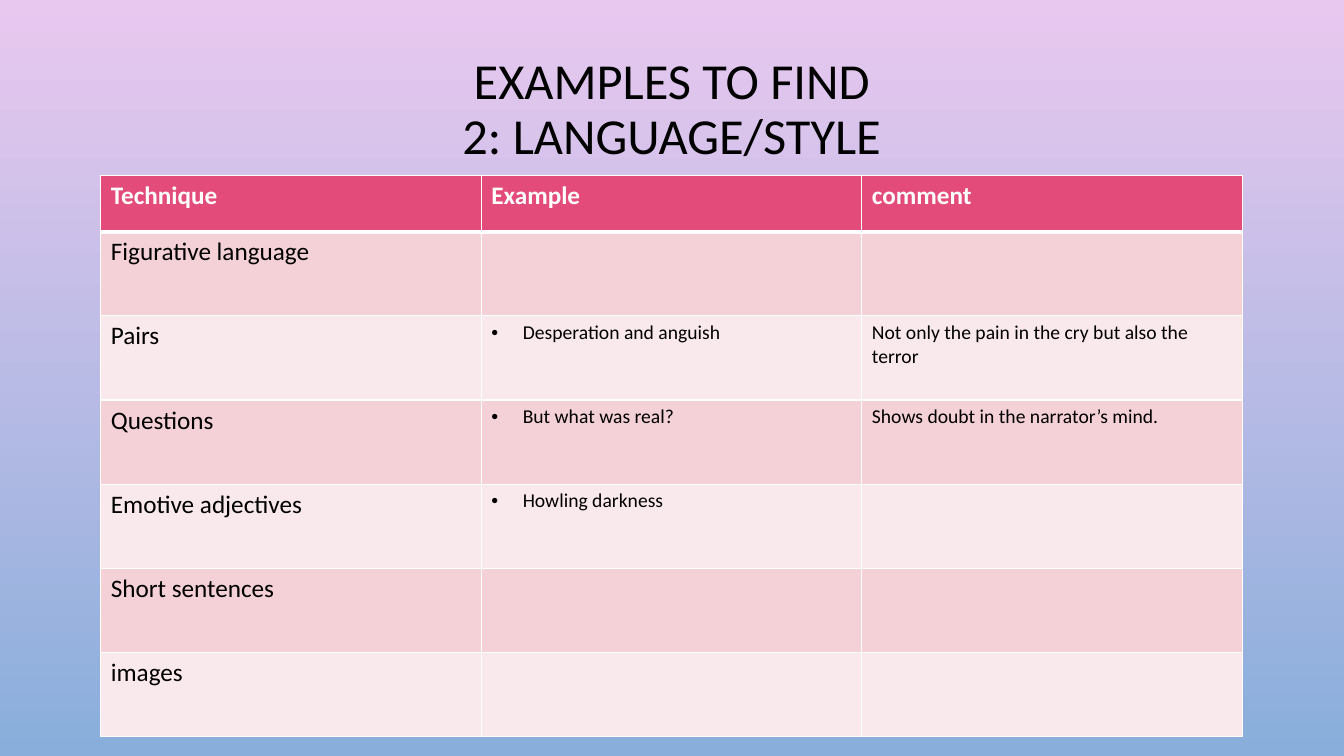
import pptx
import pptx.dml.color
import pptx.enum.text
import pptx.oxml
import pptx.oxml.ns
import pptx.util

Cm = pptx.util.Cm
Pt = pptx.util.Pt

HEADINGS = ("Technique", "Example", "comment")
TECHNIQUES = (
    ("Figurative language", "", ""),
    ("Pairs", "Desperation and anguish", "Not only the pain in the cry but also the terror"),
    ("Questions", "But what was real?", "Shows doubt in the narrator’s mind."),
    ("Emotive adjectives", "Howling darkness", ""),
    ("Short sentences", "", ""),
    ("images", "", ""),
)
TITLE = {"size": Pt(36), "bold": False, "color": "000000"}
HEADING = {"size": Pt(18), "bold": True, "color": "FFFFFF"}
TECHNIQUE = {"size": Pt(18), "bold": False, "color": "000000"}
DETAIL = {"size": Pt(14), "bold": False, "color": "000000"}
HEADING_FILL = "E34B7A"
BAND_FILLS = ("F4D0D7", "FAE9EC")
EDGE = "FFFFFF"


def set_color(target, value):
    """Give a colour format a hex colour."""
    target.rgb = pptx.dml.color.RGBColor.from_string(value)


def format_runs(paragraph, look):
    """Apply a dict of font values to every run of a paragraph."""
    for run in paragraph.runs:
        run.font.name = "Calibri"
        for attribute, value in look.items():
            if attribute == "color":
                set_color(run.font.color, value)
            else:
                setattr(run.font, attribute, value)


def paint_background(slide, top, bottom):
    """Fill the slide with a vertical gradient."""
    fill = slide.background.fill
    fill.gradient()
    fill.gradient_angle = 270
    for stop, position, value in zip(fill.gradient_stops, (0, 1), (top, bottom)):
        stop.position = position
        set_color(stop.color, value)


def add_title(slide, wording):
    """Add the centred slide title."""
    title = slide.shapes.add_textbox(Cm(2.54), Cm(0.56), Cm(28.78), Cm(4.45))
    frame = title.text_frame
    frame.word_wrap = True
    frame.vertical_anchor = pptx.enum.text.MSO_ANCHOR.MIDDLE
    heading = frame.paragraphs[0]
    heading.text = wording
    heading.alignment = pptx.enum.text.PP_ALIGN.CENTER
    heading.line_spacing = 0.9
    format_runs(heading, TITLE)


def add_bullet(paragraph):
    """Give a paragraph a round bullet with a hanging indent."""
    properties = paragraph._p.get_or_add_pPr()
    properties.set("marL", str(Cm(0.79)))
    properties.set("indent", str(-Cm(0.79)))
    namespace = pptx.oxml.ns.nsdecls("a")
    for element in ('buFont {} typeface="Arial"', 'buChar {} char="•"'):
        properties.append(pptx.oxml.parse_xml(f"<a:{element.format(namespace)}/>"))


def add_borders(cell, top, bottom):
    """Draw the four edges of a cell, with the given top and bottom widths."""
    properties = cell._tc.get_or_add_tcPr()
    for side, width in (("L", 1), ("R", 1), ("T", top), ("B", bottom)):
        properties.append(pptx.oxml.parse_xml(
            f'<a:ln{side} {pptx.oxml.ns.nsdecls("a")} w="{Pt(width)}">'
            f'<a:solidFill><a:srgbClr val="{EDGE}"/></a:solidFill></a:ln{side}>'))


def fill_cell(cell, wording, look, fill, edges, bulleted):
    """Write and style one table cell."""
    add_borders(cell, *edges)
    cell.fill.solid()
    set_color(cell.fill.fore_color, fill)
    if not wording:
        return
    paragraph = cell.text_frame.paragraphs[0]
    paragraph.text = wording
    if bulleted:
        add_bullet(paragraph)
    format_runs(paragraph, look)


def add_techniques(slide):
    """Add the table of techniques, examples and comments."""
    rows = (HEADINGS, *TECHNIQUES)
    grid = slide.shapes.add_table(
        len(rows), len(HEADINGS), Cm(2.54), Cm(4.42), Cm(28.78), Cm(14.14)).table
    grid.horz_banding = False
    for column in grid.columns:
        column.width = Cm(9.59)
    for r, wordings in enumerate(rows):
        grid.rows[r].height = Cm(2.12 if r else 1.42)
        fill = BAND_FILLS[(r - 1) % 2] if r else HEADING_FILL
        edges = (3 if r == 1 else 1, 1 if r else 3)
        for c, wording in enumerate(wordings):
            look = (DETAIL if c else TECHNIQUE) if r else HEADING
            fill_cell(grid.cell(r, c), wording, look, fill, edges, r > 0 and c == 1)


def main():
    """Build and save the slide."""
    deck = pptx.Presentation()
    deck.slide_width = Cm(33.87)
    deck.slide_height = Cm(19.05)
    slide = deck.slides.add_slide(deck.slide_layouts[6])
    paint_background(slide, "E9C8EF", "89AEDB")
    add_title(slide, "EXAMPLES TO FIND\v2: LANGUAGE/STYLE")
    add_techniques(slide)
    deck.save("out.pptx")


if __name__ == "__main__":
    main()
